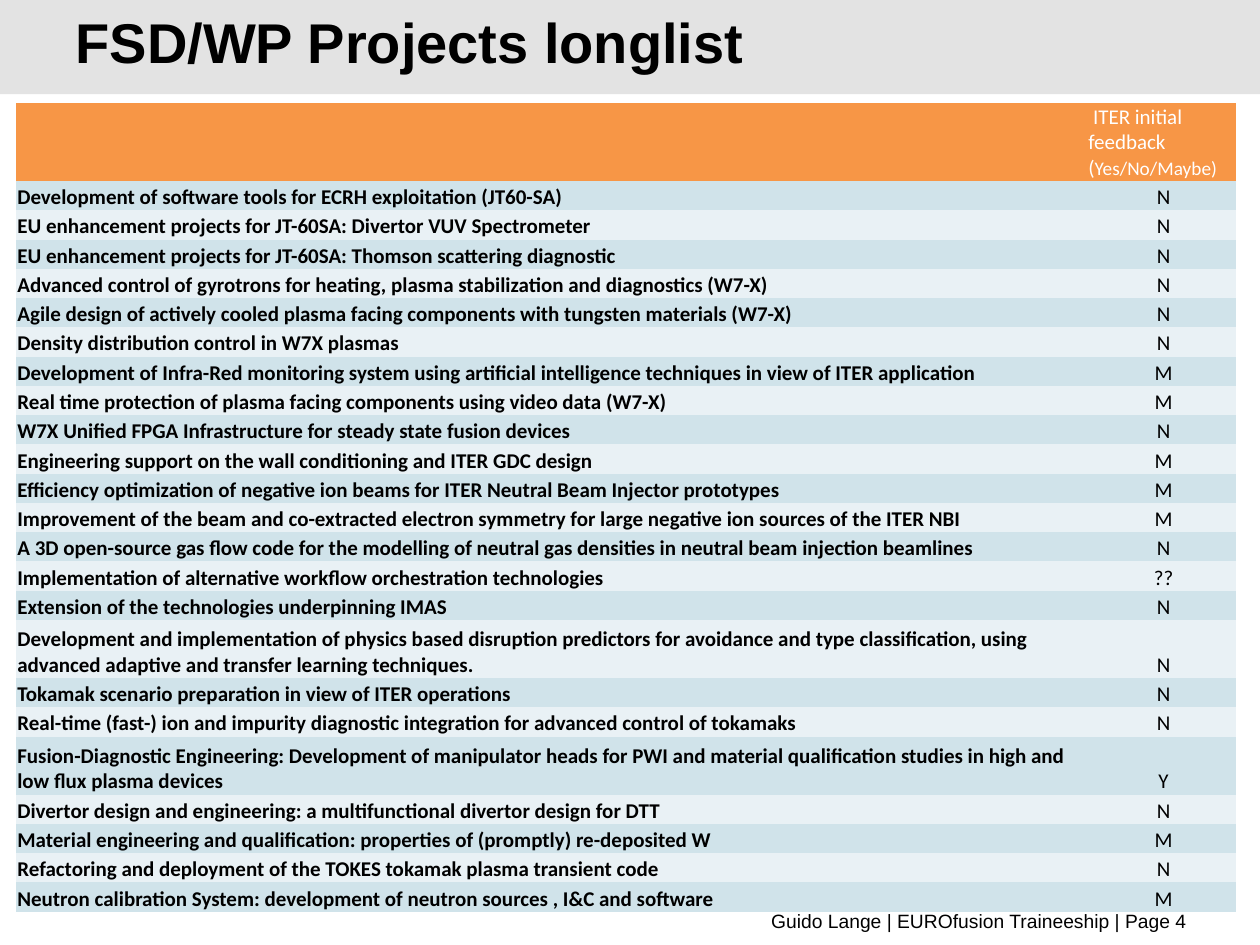
from pptx import Presentation as Deck
from pptx.dml.color import RGBColor as Rgb
from pptx.enum.shapes import MSO_SHAPE as Kind
from pptx.enum.text import MSO_ANCHOR as Anchor, PP_ALIGN as Align
from pptx.util import Cm, Pt

HUES = {"ink": "000000", "white": "FFFFFF", "band": "E3E3E3",
        "head": "F79646", "odd": "D0E3EA", "even": "E9F1F5"}
PLAIN = "{2D5ABB26-0587-4C30-8999-92F81FD0307C}"
LINE, PAIR = 0.59, 1.17

HEAD = [(" ITER initial feedback (", 12), ("Yes/No/Maybe)", 11)]
ROWS = [
    ("Development of software tools for ECRH exploitation (JT60-SA)", "N"),
    ("EU enhancement projects for JT-60SA: Divertor VUV Spectrometer", "N"),
    ("EU enhancement projects for JT-60SA: Thomson scattering diagnostic", "N"),
    ("Advanced control of gyrotrons for heating, plasma stabilization and diagnostics (W7-X)", "N"),
    ("Agile design of actively cooled plasma facing components with tungsten materials (W7-X)", "N"),
    ("Density distribution control in W7X plasmas", "N"),
    ("Development of Infra-Red monitoring system using artificial intelligence techniques "
     "in view of ITER application", "M"),
    ("Real time protection of plasma facing components using video data (W7-X)", "M"),
    ("W7X Unified FPGA Infrastructure for steady state fusion devices", "N"),
    ("Engineering support on the wall conditioning and ITER GDC design", "M"),
    ("Efficiency optimization of negative ion beams for ITER Neutral Beam Injector prototypes", "M"),
    ("Improvement of the beam and co-extracted electron symmetry for large negative ion sources "
     "of the ITER NBI", "M"),
    ("A 3D open-source gas flow code for the modelling of neutral gas densities "
     "in neutral beam injection beamlines", "N"),
    ("Implementation of alternative workflow orchestration technologies", "??"),
    ("Extension of the technologies underpinning IMAS", "N"),
    ("Development and implementation of physics based disruption predictors for avoidance and "
     "type classification, using advanced adaptive and transfer learning techniques.", "N"),
    ("Tokamak scenario preparation in view of ITER operations", "N"),
    ("Real-time (fast-) ion and impurity diagnostic integration for advanced control of tokamaks", "N"),
    ("Fusion-Diagnostic Engineering: Development of manipulator heads for PWI and material "
     "qualification studies in high and low flux plasma devices", "Y"),
    ("Divertor design and engineering: a multifunctional divertor design for DTT", "N"),
    ("Material engineering and qualification: properties of (promptly) re-deposited W", "M"),
    ("Refactoring and deployment of the TOKES tokamak plasma transient code", "N"),
    ("Neutron calibration System: development of neutron sources , I&C and software", "M"),
]


def apply(item, **vals):
    for key, val in vals.items():
        setattr(item, key, val)


class Page:
    def __init__(self, deck):
        self.slide = deck.slides.add_slide(deck.slide_layouts[5])
        self.shapes = self.slide.shapes

    def paint(self, item, hue):
        item.fill.solid()
        item.fill.fore_color.rgb = Rgb.from_string(HUES[hue])

    def put(self, frame, runs, face, hue="ink", bold=False, **form):
        para = frame.paragraphs[0]
        apply(para, **form)
        for text, size in runs:
            run = para.add_run()
            run.text = text
            apply(run.font, name=face, size=Pt(size), bold=bold)
            run.font.color.rgb = Rgb.from_string(HUES[hue])

    def band(self, *box):
        bar = self.shapes.add_shape(Kind.RECTANGLE, *map(Cm, box))
        bar.shadow.inherit = False
        bar.line.fill.background()
        self.paint(bar, "band")
        self.shapes.title.element.addprevious(bar.element)

    def title(self, text, left, top, width, height):
        head = self.shapes.title
        apply(head, left=Cm(left), top=Cm(top), width=Cm(width), height=Cm(height))
        apply(head.text_frame, vertical_anchor=Anchor.MIDDLE, word_wrap=True)
        self.put(head.text_frame, [(text, 32)], "Arial", bold=True,
                 alignment=Align.LEFT, line_spacing=Pt(32))

    def note(self, text, *box):
        frame = self.shapes.add_textbox(*map(Cm, box)).text_frame
        apply(frame, vertical_anchor=Anchor.MIDDLE, word_wrap=True)
        self.put(frame, [(text, 11)], "Arial", alignment=Align.RIGHT)

    def cell(self, cell, runs, back, **form):
        self.paint(cell, back)
        apply(cell, vertical_anchor=Anchor.BOTTOM, margin_left=Cm(0.03),
              margin_right=Cm(0.03), margin_top=Cm(0.03), margin_bottom=0)
        self.put(cell.text_frame, runs, "Calibri", **form)

    def table(self, rows, left, top, wides):
        highs = [PAIR] + [PAIR if len(name) > 120 else LINE for name, _ in rows]
        box = map(Cm, (left, top, sum(wides), sum(highs)))
        frame = self.shapes.add_table(len(highs), len(wides), *box)
        frame.element.graphic.graphicData.tbl.tblPr[0].text = PLAIN
        grid = frame.table
        apply(grid, first_row=False, horz_banding=False)
        for col, wide in zip(grid.columns, wides):
            col.width = Cm(wide)
        for row, high in zip(grid.rows, highs):
            row.height = Cm(high)
        self.cell(grid.cell(0, 0), [], "head")
        self.cell(grid.cell(0, 1), HEAD, "head", hue="white")
        for at, (name, mark) in enumerate(rows, 1):
            back = "odd" if at % 2 else "even"
            self.cell(grid.cell(at, 0), [(name, 12)], back, bold=True)
            self.cell(grid.cell(at, 1), [(" " + mark, 12)], back, alignment=Align.CENTER)


def main():
    deck = Deck()
    apply(deck, slide_width=Cm(25.4), slide_height=Cm(19.05))
    page = Page(deck)
    page.band(0, 0, 25.4, 1.9)
    page.title("FSD/WP Projects longlist", 1.27, 0.3, 20.96, 1.27)
    page.table(ROWS, 0.32, 2.07, (21.59, 3))
    page.note("Guido Lange | EUROfusion Traineeship | Page 4", 1.3, 18.19, 22.88, 0.74)
    deck.save("out.pptx")


if __name__ == "__main__":
    main()
